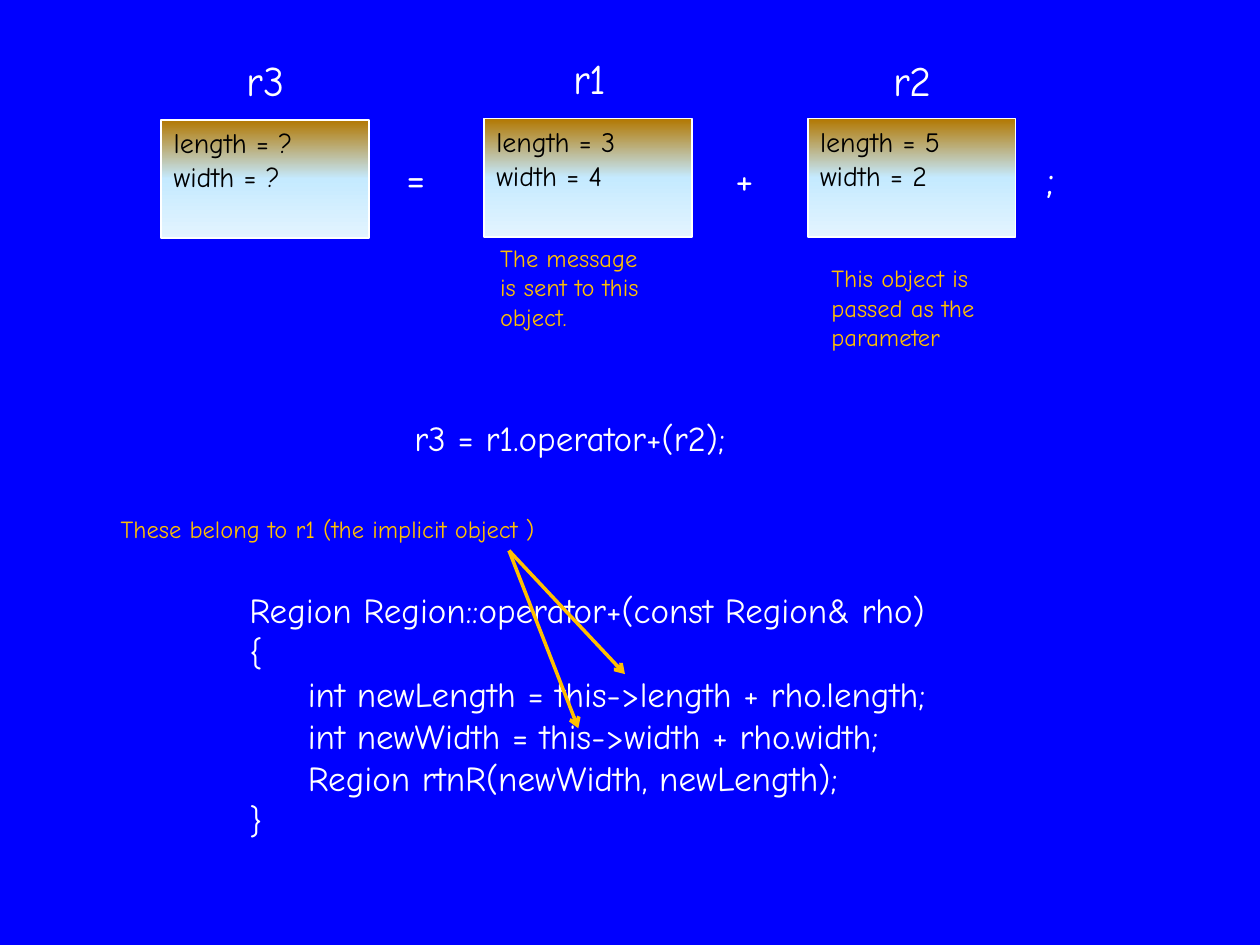
import pptx
import pptx.util
import pptx.dml.color
import pptx.enum.dml
import pptx.enum.shapes
import pptx.enum.text
import pptx.oxml
import pptx.oxml.ns

HUES = {"back": "0000FF", "white": "FFFFFF", "black": "000000", "gold": "FFC000",
        "brown": "B27700", "sky": "C5EAFF", "pale": "E3F4FF"}
FONT = "Comic Neue"
NS = pptx.oxml.ns.nsdecls("a")

deck = pptx.Presentation()
deck.slide_width = pptx.util.Inches(10)
deck.slide_height = pptx.util.Inches(7.5)
CELL = deck.slide_width / 100  # square grid: 100 columns, 75 rows
slide = deck.slides.add_slide(deck.slide_layouts[6])
slide.background.fill.solid()
slide.background.fill.fore_color.rgb = pptx.dml.color.RGBColor.from_string(HUES["back"])


def style(frame, text, size, hue):
    """Fill a text frame and format every run alike."""
    frame.text = text
    for para in frame.paragraphs:
        para.alignment = pptx.enum.text.PP_ALIGN.LEFT
        for run in para.runs:
            run.font.name = FONT
            run.font.size = pptx.util.Pt(size)
            run.font.color.rgb = pptx.dml.color.RGBColor.from_string(HUES[hue])


def label(text, col, row, wide, high, size, hue="white"):
    box = slide.shapes.add_textbox(*[round(n * CELL) for n in (col, row, wide, high)])
    box.text_frame.word_wrap = False
    box.text_frame.auto_size = pptx.enum.text.MSO_AUTO_SIZE.SHAPE_TO_FIT_TEXT
    style(box.text_frame, text, size, hue)


# Objects of the sum: name above a box of members
stops = "".join(f'<a:gs pos="{pos * 1000}"><a:srgbClr val="{HUES[hue]}"/></a:gs>'
                for pos, hue in ((0, "brown"), (50, "sky"), (100, "pale")))
objects = [
    ("r3", "?", "?", 12.8, 9.5, 18.6, 3.8, 5.7),
    ("r1", "3", "4", 38.4, 9.4, 44.5, 3.7, 5.1),
    ("r2", "5", "2", 64.1, 9.4, 69.9, 3.8, 5.7),
]
for name, length, width, col, row, left, top, wide in objects:
    rect = slide.shapes.add_shape(
        pptx.enum.shapes.MSO_SHAPE.RECTANGLE,
        *[round(n * CELL) for n in (col, row, 16.5, 9.4)])
    rect.shadow.inherit = False
    rect.line.color.rgb = pptx.dml.color.RGBColor.from_string(HUES["white"])
    rect.line.width = pptx.util.Pt(1)
    rect.fill.gradient()
    grad = rect._element.spPr.find(pptx.oxml.ns.qn("a:gradFill"))
    grad.getparent().replace(grad, pptx.oxml.parse_xml(
        f'<a:gradFill {NS} rotWithShape="1"><a:gsLst>{stops}</a:gsLst>'
        '<a:lin ang="5400000" scaled="0"/></a:gradFill>'))
    rect.text_frame.vertical_anchor = pptx.enum.text.MSO_ANCHOR.TOP
    style(rect.text_frame, f"length = {length}\nwidth = {width}", 16, "black")
    label(name, left, top, wide, 5, 24)

# Signs between the objects
for sign, col, row, wide in (("=", 31.3, 11.5, 3.7), ("+", 57.4, 11.6, 3.6),
                             (";", 82.1, 11.6, 3)):
    label(sign, col, row, wide, 5, 24)

# Notes
label("The message\nis sent to this\nobject.", 38.7, 18.8, 15.8, 8.1, 14, "gold")
label("This object is\npassed as the\nparameter", 65, 20.4, 14.7, 8.1, 14, "gold")
label("These belong to r1 (the implicit object )", 8.6, 40.3, 39.7, 3.4, 14, "gold")

# Code
label("r3 = r1.operator+(r2);", 31.9, 32.6, 30.3, 4.4, 20)
code = """Region Region::operator+(const Region& rho)
{
     int newLength = this->length + rho.length;
     int newWidth = this->width + rho.width;
     Region rtnR(newWidth, newLength);
}"""
label(code, 18.8, 46.2, 59.9, 21.2, 20)

# Arrows from the note to both uses of "this"
for col, row in ((49.6, 53.5), (45.9, 57.8)):
    arrow = slide.shapes.add_connector(
        pptx.enum.shapes.MSO_CONNECTOR.STRAIGHT,
        *[round(n * CELL) for n in (40.4, 43.7, col, row)])
    arrow.line.color.rgb = pptx.dml.color.RGBColor.from_string(HUES["gold"])
    arrow.line.width = pptx.util.Pt(2)
    arrow.line._get_or_add_ln().append(
        pptx.oxml.parse_xml(f'<a:tailEnd {NS} type="arrow"/>'))
    arrow._element.spPr.append(pptx.oxml.parse_xml(f"<a:effectLst {NS}/>"))

deck.save("out.pptx")
